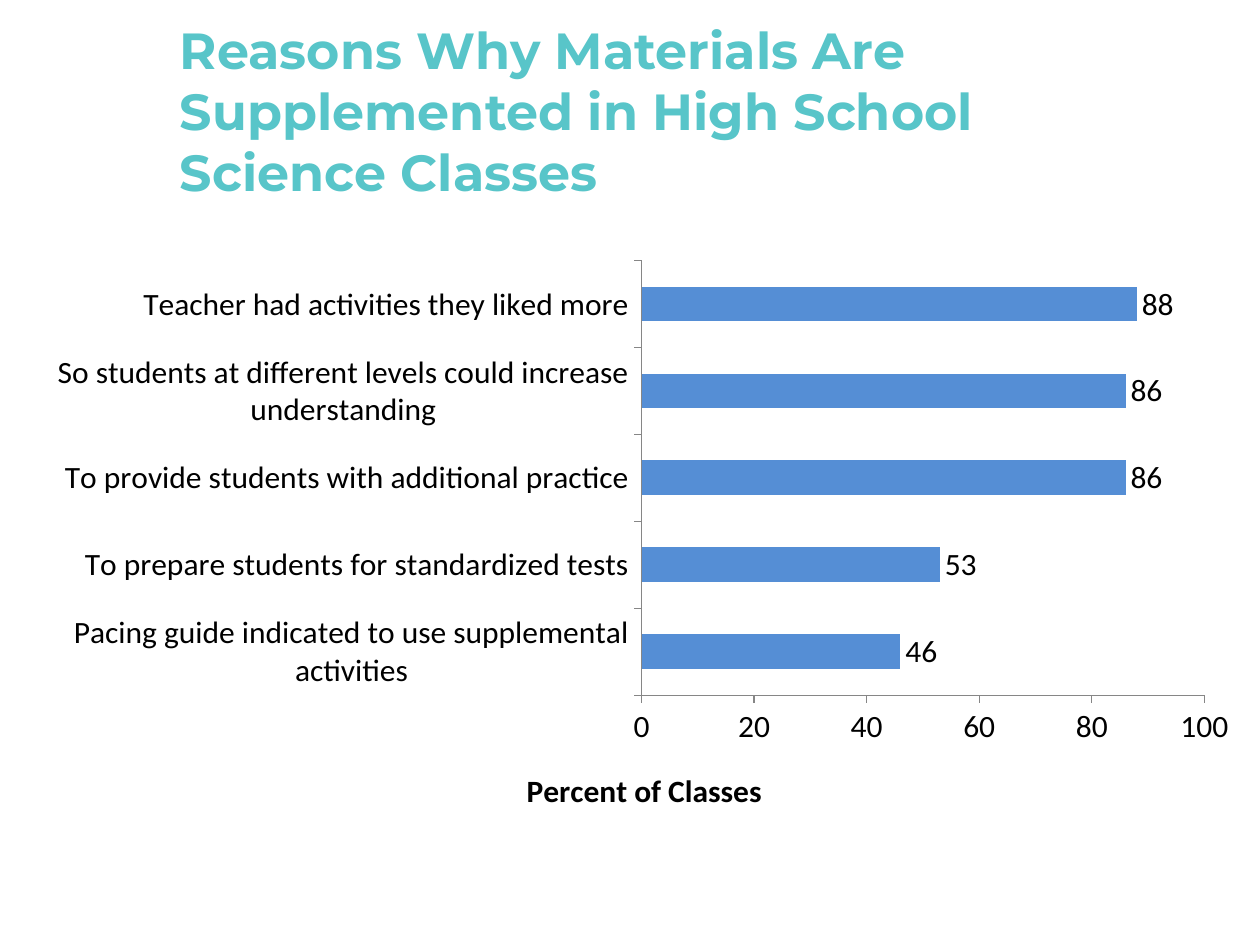
from dataclasses import dataclass

import lxml.etree
import pptx
import pptx.chart.data
import pptx.dml.color
import pptx.enum.chart
import pptx.enum.text
import pptx.oxml.ns
import pptx.util

WIDTH, HEIGHT = 10, 7.5
BLACK, AXIS_GRAY, BAR_BLUE, TEAL = "000000", "868686", "558ED5", "58C5C9"


@dataclass
class Reason:
    label: str
    percent: int


@dataclass
class Area:
    """Left, top, width and height as shares of the surrounding area."""
    left: float
    top: float
    width: float
    height: float

    def on_slide(self) -> list:
        return [pptx.util.Inches(share * side) for share, side in
                zip((self.left, self.top, self.width, self.height),
                    (WIDTH, HEIGHT, WIDTH, HEIGHT))]


# Bars run from the bottom of the chart upwards
REASONS = [
    Reason("Pacing guide indicated to use supplemental activities", 46),
    Reason("To prepare students for standardized tests", 53),
    Reason("To provide students with additional practice", 86),
    Reason("So students at different levels could increase understanding", 86),
    Reason("Teacher had activities they liked more", 88),
]
HEADING_AREA = Area(0.133, 0.033, 0.817, 0.167)
CHART_AREA = Area(0.017, 0.256, 0.967, 0.611)
PLOT_SHARES = {"x": 0.509, "y": 0.033, "w": 0.462, "h": 0.767}
AXIS_TITLE_SHARES = {"x": 0.41, "y": 0.92}


def color(hex_code: str) -> pptx.dml.color.RGBColor:
    return pptx.dml.color.RGBColor.from_string(hex_code)


def style_font(font, size: float, hex_code: str, name: str, bold: bool) -> None:
    font.size = pptx.util.Pt(size)
    font.color.rgb = color(hex_code)
    font.name = name
    font.bold = bold


def chart_layout(shares: dict, inner: bool = False):
    """Build a manual chart layout from shares of the chart area."""
    qn = pptx.oxml.ns.qn
    layout = lxml.etree.Element(qn("c:layout"))
    manual = lxml.etree.SubElement(layout, qn("c:manualLayout"))
    settings = [("layoutTarget", "inner")] if inner else []
    settings += [("xMode", "edge"), ("yMode", "edge"), *shares.items()]
    for tag, value in settings:
        lxml.etree.SubElement(manual, qn(f"c:{tag}")).set("val", str(value))
    return layout


def replace_layout(parent, layout, position: int) -> None:
    for old in parent.findall(pptx.oxml.ns.qn("c:layout")):
        parent.remove(old)
    parent.insert(position, layout)


def style_axis(axis) -> None:
    axis.has_major_gridlines = False
    axis.major_tick_mark = pptx.enum.chart.XL_TICK_MARK.OUTSIDE
    axis.minor_tick_mark = pptx.enum.chart.XL_TICK_MARK.NONE
    axis.format.line.color.rgb = color(AXIS_GRAY)
    axis.format.line.width = pptx.util.Pt(0.75)
    style_font(axis.tick_labels.font, 18, BLACK, "Calibri", False)


def add_heading(slide, text: str) -> None:
    heading = slide.shapes.add_textbox(*HEADING_AREA.on_slide())
    frame = heading.text_frame
    frame.word_wrap = True
    frame.vertical_anchor = pptx.enum.text.MSO_ANCHOR.MIDDLE
    frame.text = text
    style_font(frame.paragraphs[0].runs[0].font, 29, TEAL, "Montserrat", True)


def add_reasons_chart(slide, reasons: list[Reason]) -> None:
    data = pptx.chart.data.CategoryChartData()
    data.categories = [reason.label for reason in reasons]
    data.add_series("Series 1", [reason.percent for reason in reasons])
    chart = slide.shapes.add_chart(
        pptx.enum.chart.XL_CHART_TYPE.BAR_CLUSTERED,
        *CHART_AREA.on_slide(), data).chart
    chart.has_legend = False
    chart.has_title = False
    style_font(chart.font, 18, BLACK, "Calibri", False)

    # Bars and their values
    plot = chart.plots[0]
    plot.gap_width = 150
    plot.vary_by_categories = False
    bars = plot.series[0]
    bars.format.fill.solid()
    bars.format.fill.fore_color.rgb = color(BAR_BLUE)
    labels = bars.data_labels
    labels.show_value = True
    labels.position = pptx.enum.chart.XL_LABEL_POSITION.OUTSIDE_END
    style_font(labels.font, 18, BLACK, "Calibri", False)

    # Axes
    percent_axis = chart.value_axis
    for axis in (chart.category_axis, percent_axis):
        style_axis(axis)
    percent_axis.minimum_scale = 0
    percent_axis.maximum_scale = 100
    percent_axis.major_unit = 20
    caption = percent_axis.axis_title
    caption.text_frame.text = "Percent of Classes"
    caption_run = caption.text_frame.paragraphs[0].runs[0]
    style_font(caption_run.font, 18, BLACK, "Calibri", True)

    # Placement of the plot and the axis caption
    plot_area = chart.element.find(".//" + pptx.oxml.ns.qn("c:plotArea"))
    replace_layout(plot_area, chart_layout(PLOT_SHARES, inner=True), 0)
    caption_element = plot_area.find(".//" + pptx.oxml.ns.qn("c:title"))
    replace_layout(caption_element, chart_layout(AXIS_TITLE_SHARES), 1)


def main() -> None:
    deck = pptx.Presentation()
    deck.slide_width = pptx.util.Inches(WIDTH)
    deck.slide_height = pptx.util.Inches(HEIGHT)
    slide = deck.slides.add_slide(deck.slide_layouts[6])
    add_reasons_chart(slide, REASONS)
    add_heading(slide, "Reasons Why Materials Are Supplemented "
                       "in High School Science Classes")
    deck.save("out.pptx")


if __name__ == "__main__":
    main()
